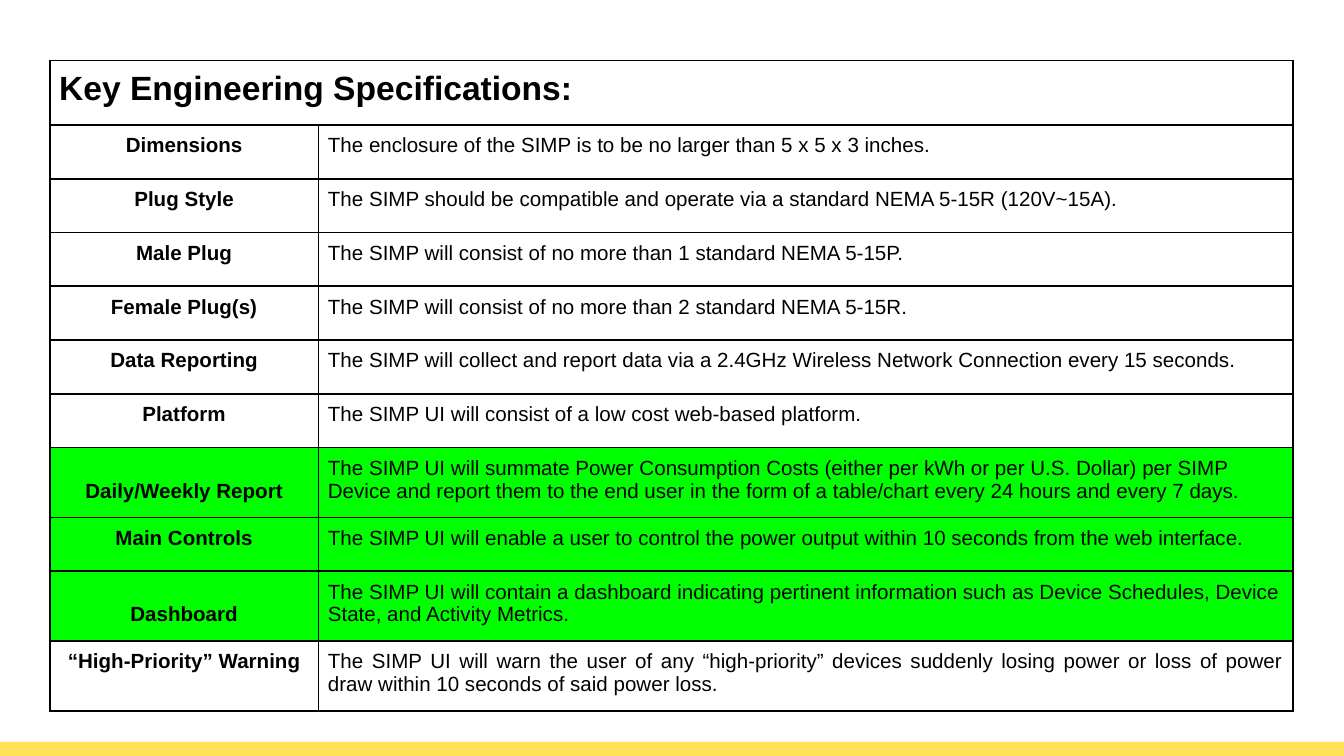
from dataclasses import dataclass

from lxml import etree
from pptx import Presentation
from pptx.dml.color import RGBColor
from pptx.enum.shapes import MSO_SHAPE
from pptx.enum.text import MSO_ANCHOR, PP_ALIGN
from pptx.oxml.ns import qn
from pptx.util import Inches, Pt

RECTANGLE = MSO_SHAPE.RECTANGLE
TOP = MSO_ANCHOR.TOP
LEFT, CENTER, JUSTIFY = PP_ALIGN.LEFT, PP_ALIGN.CENTER, PP_ALIGN.JUSTIFY


@dataclass(frozen=True)
class Theme:
    font: str = "Arial"
    title_size: float = 18
    body_size: float = 11
    text: str = "000000"
    border: str = "000000"
    border_width: float = 1
    highlight: str = "00FF00"
    footer: str = "FFE255"
    cell_margin: float = 0.07
    line_height: float = 0.17


@dataclass(frozen=True)
class Specification:
    label: str
    description: str
    height: float = 0.4
    highlighted: bool = False
    alignment: PP_ALIGN = LEFT
    label_drop: int = 0  # text lines the label sits below the top


THEME = Theme()
SLIDE_WIDTH = 10
SLIDE_HEIGHT = SLIDE_WIDTH * 9 / 16
TABLE_LEFT, TABLE_TOP = 0.37, 0.45
COLUMN_WIDTHS = (2, 7.25)
TITLE_HEIGHT = 0.48
TALL = 0.52
FOOTER_TOP, FOOTER_HEIGHT = 5.52, 0.11

TITLE = "Key Engineering Specifications:"
SPECIFICATIONS = (
    Specification("Dimensions", "The enclosure of the SIMP is to be no larger than 5 x 5 x 3 inches."),
    Specification("Plug Style", "The SIMP should be compatible and operate via a standard "
                  "NEMA 5-15R (120V~15A)."),
    Specification("Male Plug", "The SIMP will consist of no more than 1 standard NEMA 5-15P."),
    Specification("Female Plug(s)", "The SIMP will consist of no more than 2 standard NEMA 5-15R."),
    Specification("Data Reporting", "The SIMP will collect and report data via a 2.4GHz Wireless "
                  "Network Connection every 15 seconds."),
    Specification("Platform", "The SIMP UI will consist of a low cost web-based platform.",
                  alignment=JUSTIFY),
    Specification("Daily/Weekly Report", "The SIMP UI will summate Power Consumption Costs (either "
                  "per kWh or per U.S. Dollar) per SIMP Device and report them to the end user in "
                  "the form of a table/chart every 24 hours and every 7 days.",
                  TALL, highlighted=True, label_drop=1),
    Specification("Main Controls", "The SIMP UI will enable a user to control the power output "
                  "within 10 seconds from the web interface.", highlighted=True),
    Specification("Dashboard", "The SIMP UI will contain a dashboard indicating pertinent "
                  "information such as Device Schedules, Device State, and Activity Metrics.",
                  TALL, highlighted=True, label_drop=1),
    Specification("“High-Priority” Warning", "The SIMP UI will warn the user of any “high-priority” "
                  "devices suddenly losing power or loss of power draw within 10 seconds of said "
                  "power loss.", TALL, alignment=JUSTIFY),
)


def set_borders(cell) -> None:
    properties = cell._tc.get_or_add_tcPr()
    for side in ("lnL", "lnR", "lnT", "lnB"):
        line = etree.SubElement(properties, qn(f"a:{side}"), w=str(Pt(THEME.border_width)))
        fill = etree.SubElement(line, qn("a:solidFill"))
        etree.SubElement(fill, qn("a:srgbClr"), val=THEME.border)


def write_cell(cell, text: str, size: float = THEME.body_size, bold: bool = False,
               alignment: PP_ALIGN = LEFT, highlighted: bool = False, drop: int = 0) -> None:
    margin = Inches(THEME.cell_margin)
    cell_format = {
        "margin_left": margin, "margin_right": margin, "margin_bottom": margin,
        "margin_top": Inches(THEME.cell_margin + drop * THEME.line_height),
        "vertical_anchor": TOP,
    }
    for name, value in cell_format.items():
        setattr(cell, name, value)

    if highlighted:
        cell.fill.solid()
        cell.fill.fore_color.rgb = RGBColor.from_string(THEME.highlight)
    else:
        cell.fill.background()

    paragraph = cell.text_frame.paragraphs[0]
    paragraph.alignment = alignment
    run = paragraph.add_run()
    run.text = text
    for name, value in {"name": THEME.font, "size": Pt(size), "bold": bold}.items():
        setattr(run.font, name, value)
    run.font.color.rgb = RGBColor.from_string(THEME.text)


def add_footer(slide) -> None:
    shape = slide.shapes.add_shape(RECTANGLE, 0, Inches(FOOTER_TOP),
                                   Inches(SLIDE_WIDTH), Inches(FOOTER_HEIGHT))
    shape.shadow.inherit = False
    shape.fill.solid()
    shape.fill.fore_color.rgb = RGBColor.from_string(THEME.footer)
    shape.line.fill.background()


def add_specification_table(slide) -> None:
    heights = [TITLE_HEIGHT] + [item.height for item in SPECIFICATIONS]
    table = slide.shapes.add_table(
        len(heights), len(COLUMN_WIDTHS), Inches(TABLE_LEFT), Inches(TABLE_TOP),
        Inches(sum(COLUMN_WIDTHS)), Inches(sum(heights))).table
    table.first_row = table.horz_banding = False
    for column, width in zip(table.columns, COLUMN_WIDTHS):
        column.width = Inches(width)
    for row, height in zip(table.rows, heights):
        row.height = Inches(height)
    for cell in table.iter_cells():
        set_borders(cell)

    # Title row
    table.cell(0, 0).merge(table.cell(0, 1))
    write_cell(table.cell(0, 0), TITLE, THEME.title_size, bold=True)

    # Specification rows
    for index, item in enumerate(SPECIFICATIONS, start=1):
        write_cell(table.cell(index, 0), item.label, bold=True, alignment=CENTER,
                   highlighted=item.highlighted, drop=item.label_drop)
        write_cell(table.cell(index, 1), item.description, alignment=item.alignment,
                   highlighted=item.highlighted)


def main() -> None:
    presentation = Presentation()
    presentation.slide_width = Inches(SLIDE_WIDTH)
    presentation.slide_height = Inches(SLIDE_HEIGHT)
    slide = presentation.slides.add_slide(presentation.slide_layouts[6])
    add_footer(slide)
    add_specification_table(slide)
    presentation.save("out.pptx")


if __name__ == "__main__":
    main()
